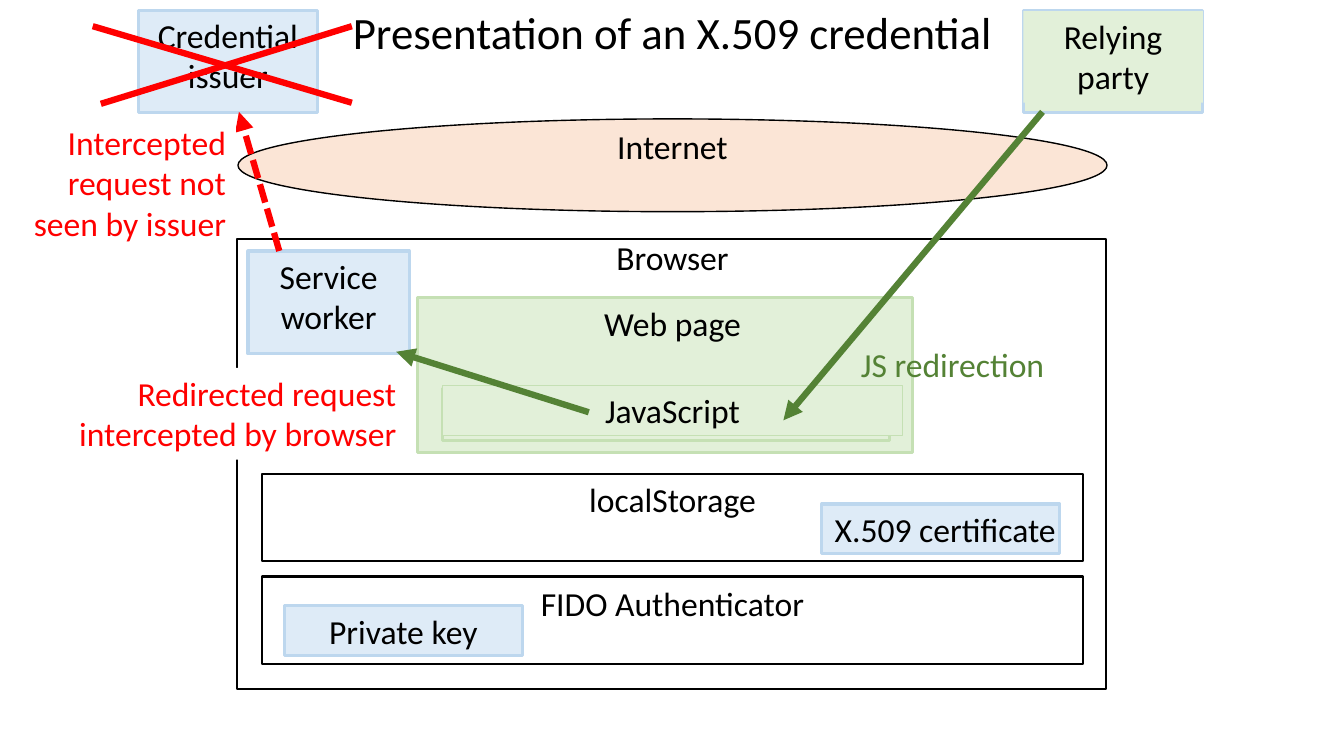
"""Build the slide on presenting an X.509 credential."""
from dataclasses import dataclass
from typing import Any, Optional

from lxml.etree import SubElement
from pptx import Presentation
from pptx.dml.color import RGBColor
from pptx.enum.dml import MSO_LINE_DASH_STYLE as Dash
from pptx.enum.shapes import MSO_AUTO_SHAPE_TYPE as Shape, MSO_CONNECTOR_TYPE as Connector
from pptx.enum.text import MSO_ANCHOR as Anchor, MSO_AUTO_SIZE as AutoSize, PP_ALIGN as Align
from pptx.oxml.ns import qn
from pptx.util import Emu, Pt

PX_PER_INCH = 100


@dataclass(frozen=True)
class Theme:
    font: str = "Calibri"
    title_size: int = 32
    text_size: int = 24
    black: str = "000000"
    white: str = "FFFFFF"
    red: str = "FF0000"
    green: str = "548235"
    pale_green: str = "E2F0D9"
    green_edge: str = "C5E0B4"
    pale_blue: str = "DEEBF7"
    blue_edge: str = "BDD7EE"
    peach: str = "FBE5D6"
    hairline: float = 0.75
    thin: float = 1
    frame: float = 1.5
    edge: float = 2.25
    arrow: float = 4.5


THEME = Theme()


@dataclass(frozen=True)
class Block:
    left: int
    top: int
    width: int
    height: int
    text: str = ""
    fill: Optional[str] = None
    edge: Optional[str] = None
    weight: float = THEME.edge
    shape: Shape = Shape.RECTANGLE
    color: str = THEME.black
    align: Align = Align.CENTER


@dataclass(frozen=True)
class Line:
    start: tuple[int, int]
    end: tuple[int, int]
    color: str
    arrow: bool = True
    dashed: bool = False


def px(length: int) -> Emu:
    """Turn px into EMU."""
    return Emu(length * 914400 // PX_PER_INCH)


def apply(target: Any, values: dict[str, Any]) -> None:
    """Set each named attribute on the target."""
    for name, value in values.items():
        setattr(target, name, value)


def write(box: Any, text: str, size: int, color: str, align: Align,
          anchor: Anchor, auto_size: AutoSize) -> None:
    """Fill a box with formatted paragraphs."""
    frame = box.text_frame
    frame.text = text
    apply(frame, {"word_wrap": True, "auto_size": auto_size, "vertical_anchor": anchor})
    for para in frame.paragraphs:
        para.alignment = align
        for span in para.runs:
            apply(span.font, {"name": THEME.font, "size": Pt(size)})
            span.font.color.rgb = RGBColor.from_string(color)


def draw_block(page: Any, block: Block) -> None:
    """Draw a filled shape or a plain text box."""
    place = [px(n) for n in (block.left, block.top, block.width, block.height)]
    if block.fill:
        box = page.shapes.add_shape(block.shape, *place)
        box.shadow.inherit = False
        box.fill.solid()
        box.fill.fore_color.rgb = RGBColor.from_string(block.fill)
        if block.edge:
            box.line.color.rgb = RGBColor.from_string(block.edge)
            box.line.width = Pt(block.weight)
        else:
            box.line.fill.background()
    else:
        box = page.shapes.add_textbox(*place)
    if block.text:
        write(box, block.text, THEME.text_size, block.color, block.align,
              Anchor.TOP, AutoSize.SHAPE_TO_FIT_TEXT)


def draw_line(page: Any, line: Line) -> None:
    """Draw a straight line, with an arrowhead at its end if wanted."""
    connector = page.shapes.add_connector(
        Connector.STRAIGHT, *map(px, line.start + line.end))
    connector.line.color.rgb = RGBColor.from_string(line.color)
    connector.line.width = Pt(THEME.arrow)
    if line.dashed:
        connector.line.dash_style = Dash.SQUARE_DOT
    if line.arrow:
        SubElement(connector.line._get_or_add_ln(), qn("a:tailEnd"), type="triangle")
    SubElement(connector._element.spPr, qn("a:effectLst"))


def label(left: int, top: int, width: int, text: str, height: int = 50) -> Block:
    """Describe a centred caption."""
    return Block(left, top, width, height, text)


def panel(left: int, top: int, width: int, height: int) -> Block:
    """Describe a white framed area."""
    return Block(left, top, width, height, fill=THEME.white, edge=THEME.black,
                 weight=THEME.frame)


def blue(left: int, top: int, width: int, height: int) -> Block:
    """Describe a pale blue box."""
    return Block(left, top, width, height, fill=THEME.pale_blue, edge=THEME.blue_edge)


def green(left: int, top: int, width: int, height: int, text: str = "",
          edge: Optional[str] = THEME.green_edge, weight: float = THEME.edge) -> Block:
    """Describe a pale green box."""
    return Block(left, top, width, height, text, THEME.pale_green, edge, weight)


def note(left: int, top: int, width: int, height: int, text: str) -> Block:
    """Describe a red remark on white."""
    return Block(left, top, width, height, text, THEME.white, color=THEME.red,
                 align=Align.RIGHT)


ITEMS: list[Block | Line] = [
    panel(235, 237, 862, 447),
    Block(236, 118, 862, 92, fill=THEME.peach, edge=THEME.black, weight=THEME.thin,
          shape=Shape.OVAL),
    label(236, 120, 862, "Internet"),
    label(236, 230, 862, "Browser"),
    panel(260, 470, 814, 87),
    label(260, 470, 814, "localStorage"),
    panel(260, 572, 814, 87),
    label(260, 573, 814, "FIDO Authenticator"),
    green(414, 295, 491, 154),
    label(260, 296, 814, "Web page"),
    blue(282, 601, 236, 49),
    label(282, 601, 236, "Private key"),
    green(439, 385, 443, 52),
    green(439, 382, 456, 50, "JavaScript", weight=THEME.hairline),
    blue(815, 500, 236, 49),
    label(815, 500, 245, "X.509 certificate"),
    blue(137, 10, 178, 102),
    label(137, 10, 178, "Credential\nissuer", 91),
    blue(246, 249, 160, 102),
    label(246, 249, 160, "Service worker", 91),
    green(1015, 10, 178, 102, edge=THEME.blue_edge),
    green(1015, 11, 178, 91, "Relying party", edge=None),
    Line((1034, 111), (777, 417), THEME.green),
    Line((584, 409), (393, 349), THEME.green),
    Block(844, 336, 333, 50, "JS redirection", color=THEME.green, align=Align.LEFT),
    note(56, 365, 347, 91, "Redirected request intercepted by browser"),
    Line((277, 249), (237, 111), THEME.red, dashed=True),
    Line((92, 26), (349, 102), THEME.red, arrow=False),
    Line((100, 103), (349, 26), THEME.red, arrow=False),
    note(0, 116, 234, 131, "Intercepted request not seen by issuer"),
]


def main() -> None:
    """Build and save the deck."""
    deck = Presentation()
    apply(deck, {"slide_width": px(1333), "slide_height": px(750)})
    page = deck.slides.add_slide(deck.slide_layouts[5])
    title = page.shapes.title
    apply(title, {"left": px(92), "top": px(2), "width": px(1150), "height": px(66)})
    write(title, "Presentation of an X.509 credential", THEME.title_size, THEME.black,
          Align.CENTER, Anchor.MIDDLE, AutoSize.NONE)
    title.text_frame.paragraphs[0].line_spacing = 0.9
    for item in ITEMS:
        if isinstance(item, Block):
            draw_block(page, item)
        else:
            draw_line(page, item)
    deck.save("out.pptx")


if __name__ == "__main__":
    main()
